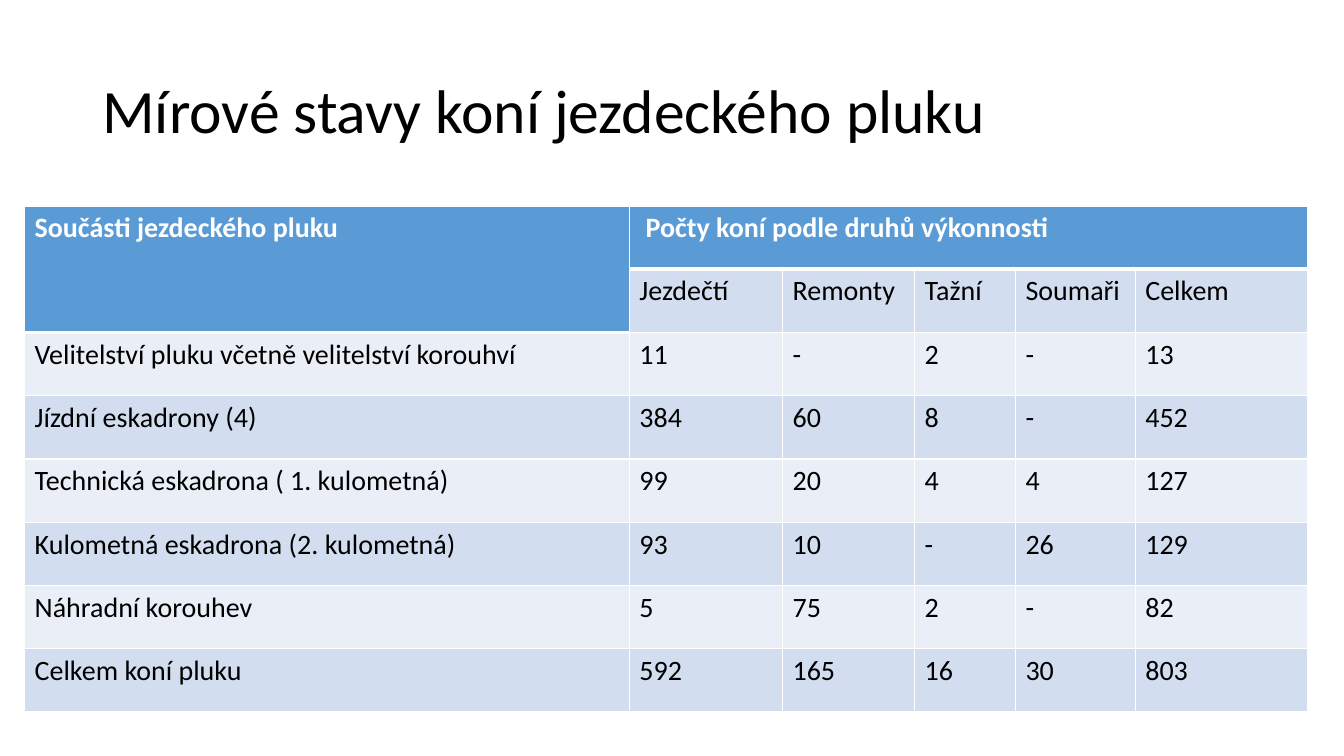
from dataclasses import dataclass

from lxml.etree import SubElement
from pptx import Presentation
from pptx.dml.color import RGBColor
from pptx.enum.text import MSO_ANCHOR
from pptx.oxml.ns import qn
from pptx.util import Cm, Pt

HUES = {
    "text": "000000",
    "white": "FFFFFF",
    "head": "5B9BD5",
    "dark": "D2DEEF",
    "light": "EAEFF7",
}
FONT = "Calibri"
WIDTHS = [15.24, 3.86, 3.33, 2.54, 3.02, 4.34]
ROW_HEIGHT = 1.594


@dataclass
class Unit:
    name: str
    counts: list[str]


UNITS = [
    Unit("Velitelství pluku včetně velitelství korouhví", ["11", "-", "2", "-", "13"]),
    Unit("Jízdní eskadrony (4)", ["384", "60", "8", "-", "452"]),
    Unit("Technická eskadrona ( 1. kulometná)", ["99", "20", "4", "4", "127"]),
    Unit("Kulometná eskadrona (2. kulometná)", ["93", "10", "-", "26", "129"]),
    Unit("Náhradní korouhev", ["5", "75", "2", "-", "82"]),
    Unit("Celkem koní pluku", ["592", "165", "16", "30", "803"]),
]
ROWS = [
    ["Součásti jezdeckého pluku", "Počty koní podle druhů výkonnosti", "", "", "", ""],
    ["", "Jezdečtí", "Remonty", "Tažní", "Soumaři", "Celkem"],
    *([unit.name, *unit.counts] for unit in UNITS),
]


def add_run(para, text: str, size: int, hue: str, bold: bool = False) -> None:
    run = para.add_run()
    run.text = text
    font = run.font
    font.name, font.size, font.bold = FONT, Pt(size), bold
    font.color.rgb = RGBColor.from_string(HUES[hue])


def is_head(row: int, col: int) -> bool:
    return row == 0 or (row == 1 and col == 0)


def add_edge(cell, side: str, width: int) -> None:
    props = cell._tc.get_or_add_tcPr()
    line = SubElement(props, qn(f"a:ln{side}"), w=str(Pt(width)))
    fill = SubElement(line, qn("a:solidFill"))
    SubElement(fill, qn("a:srgbClr"), val=HUES["white"])


def style_cell(cell, row: int, col: int) -> None:
    """Set white edges, thick beside the header, then the fill."""
    head = is_head(row, col)
    under = row > 0 and is_head(row - 1, col)
    for side, thick in (("L", False), ("R", False), ("T", under), ("B", head)):
        add_edge(cell, side, 3 if thick else 1)
    hue = "head" if head else "dark" if row % 2 else "light"
    cell.fill.solid()
    cell.fill.fore_color.rgb = RGBColor.from_string(HUES[hue])


def add_title(slide, text: str) -> None:
    box = slide.shapes.add_textbox(Cm(2.33), Cm(1.01), Cm(29.21), Cm(3.68))
    frame = box.text_frame
    frame.word_wrap = True
    frame.vertical_anchor = MSO_ANCHOR.MIDDLE
    para = frame.paragraphs[0]
    para.line_spacing = 0.9
    add_run(para, text, 44, "text")


def add_grid(slide) -> None:
    frame = slide.shapes.add_table(
        len(ROWS), len(WIDTHS), Cm(0.62), Cm(5.19),
        Cm(sum(WIDTHS)), Cm(ROW_HEIGHT * len(ROWS)),
    )
    table = frame.table
    for column, width in zip(table.columns, WIDTHS):
        column.width = Cm(width)
    for line in table.rows:
        line.height = Cm(ROW_HEIGHT)
    for row, texts in enumerate(ROWS):
        for col, text in enumerate(texts):
            cell = table.cell(row, col)
            style_cell(cell, row, col)
            if text:
                head = is_head(row, col)
                hue = "white" if head else "text"
                add_run(cell.text_frame.paragraphs[0], text, 20, hue, head)
    table.cell(0, 0).merge(table.cell(1, 0))
    table.cell(0, 1).merge(table.cell(0, len(WIDTHS) - 1))
    table.cell(0, 1).margin_left = Cm(0.41)


def main() -> None:
    deck = Presentation()
    deck.slide_width, deck.slide_height = Cm(33.87), Cm(19.05)
    slide = deck.slides.add_slide(deck.slide_layouts[6])
    add_title(slide, "Mírové stavy koní jezdeckého pluku")
    add_grid(slide)
    deck.save("out.pptx")


if __name__ == "__main__":
    main()
